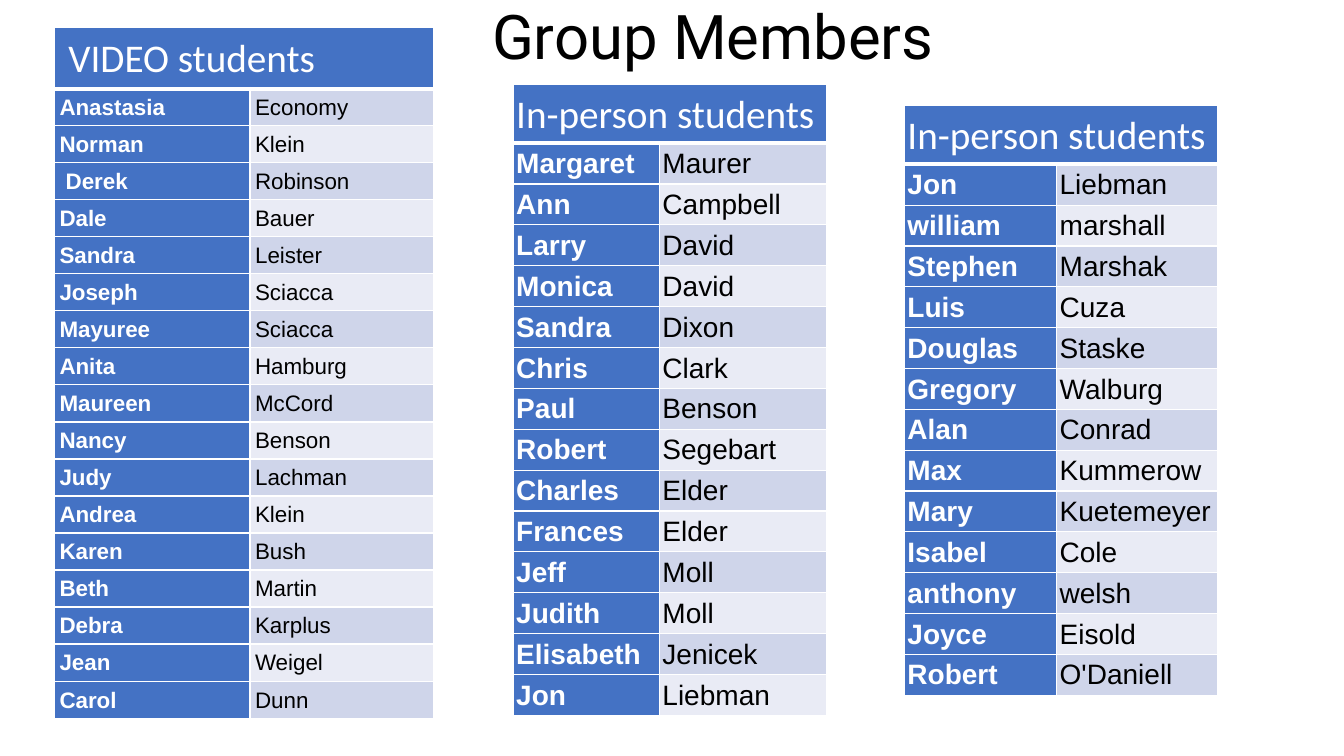
import pptx
import pptx.dml.color
import pptx.enum.text
import pptx.oxml
import pptx.oxml.ns
import pptx.util
from pptx.util import Inches

BLUE, WHITE, BLACK = "4472C4", "FFFFFF", "000000"
BANDS = ("CFD5EA", "E9EBF5")

REMOTE_STUDENTS = [
    ("Anastasia", "Economy"), ("Norman", "Klein"), (" Derek", "Robinson"),
    ("Dale", "Bauer"), ("Sandra", "Leister"), ("Joseph", "Sciacca"),
    ("Mayuree", "Sciacca"), ("Anita", "Hamburg"), ("Maureen", "McCord"),
    ("Nancy", "Benson"), ("Judy", "Lachman"), ("Andrea", "Klein"),
    ("Karen", "Bush"), ("Beth", "Martin"), ("Debra", "Karplus"),
    ("Jean", "Weigel"), ("Carol", "Dunn"),
]
FIRST_IN_PERSON_STUDENTS = [
    ("Margaret", "Maurer"), ("Ann", "Campbell"), ("Larry", "David"),
    ("Monica", "David"), ("Sandra", "Dixon"), ("Chris", "Clark"),
    ("Paul", "Benson"), ("Robert", "Segebart"), ("Charles", "Elder"),
    ("Frances", "Elder"), ("Jeff", "Moll"), ("Judith", "Moll"),
    ("Elisabeth", "Jenicek"), ("Jon", "Liebman"),
]
SECOND_IN_PERSON_STUDENTS = [
    ("Jon", "Liebman"), ("william", "marshall"), ("Stephen", "Marshak"),
    ("Luis", "Cuza"), ("Douglas", "Staske"), ("Gregory", "Walburg"),
    ("Alan", "Conrad"), ("Max", "Kummerow"), ("Mary", "Kuetemeyer"),
    ("Isabel", "Cole"), ("anthony", "welsh"), ("Joyce", "Eisold"),
    ("Robert", "O'Daniell"),
]


def color(value):
    return pptx.dml.color.RGBColor.from_string(value)


def add_run(paragraph, text, font, size, text_color, bold=False):
    run = paragraph.add_run()
    run.text = text
    run.font.name = font
    run.font.size = pptx.util.Pt(size)
    run.font.bold = bold
    run.font.color.rgb = color(text_color)


def add_borders(cell, top=1, bottom=1):
    properties = cell._tc.get_or_add_tcPr()
    for side, points in (("L", 1), ("R", 1), ("T", top), ("B", bottom)):
        properties.append(pptx.oxml.parse_xml(
            f'<a:ln{side} {pptx.oxml.ns.nsdecls("a")} w="{pptx.util.Pt(points)}">'
            f'<a:solidFill><a:srgbClr val="{WHITE}"/></a:solidFill></a:ln{side}>'))


def format_cell(cell, fill, side_margin, top_margin):
    cell.fill.solid()
    cell.fill.fore_color.rgb = color(fill)
    cell.margin_left = cell.margin_right = Inches(side_margin)
    cell.margin_top = cell.margin_bottom = Inches(top_margin)
    paragraph = cell.text_frame.paragraphs[0]
    paragraph.line_spacing = 1.07
    return paragraph


def add_title(slide, left, top, width, height):
    title = slide.shapes.title
    title.left, title.top = Inches(left), Inches(top)
    title.width, title.height = Inches(width), Inches(height)
    title.text_frame.vertical_anchor = pptx.enum.text.MSO_ANCHOR.MIDDLE
    paragraph = title.text_frame.paragraphs[0]
    paragraph.alignment = pptx.enum.text.PP_ALIGN.LEFT
    paragraph.line_spacing = 0.9
    add_run(paragraph, "Group Members", "Roboto", 44, BLACK)


def add_roster(slide, left, top, height, widths, header_height, heading,
               students, size, side_margin, top_margin):
    table = slide.shapes.add_table(
        len(students) + 1, 2, Inches(left), Inches(top),
        Inches(sum(widths)), Inches(height)).table
    for column, width in zip(table.columns, widths):
        column.width = Inches(width)
    row_height = Inches((height - header_height) / len(students))
    for row in table.rows:
        row.height = row_height
    table.rows[0].height = Inches(header_height)

    for cell in table.rows[0].cells:
        add_borders(cell, bottom=3)
    header = table.cell(0, 0)
    header.merge(table.cell(0, 1))
    paragraph = format_cell(header, BLUE, side_margin, top_margin)
    add_run(paragraph, heading, "Calibri", 28, WHITE)

    for index, names in enumerate(students):
        styles = ((BLUE, WHITE, True), (BANDS[index % 2], BLACK, False))
        for column, (name, style) in enumerate(zip(names, styles)):
            fill, text_color, bold = style
            cell = table.cell(index + 1, column)
            add_borders(cell, top=3 if index == 0 else 1)
            paragraph = format_cell(cell, fill, side_margin, top_margin)
            add_run(paragraph, name, "Arial", size, text_color, bold)


def main():
    presentation = pptx.Presentation()
    presentation.slide_width = Inches(13.33)
    presentation.slide_height = Inches(7.5)
    slide = presentation.slides.add_slide(presentation.slide_layouts[5])
    add_title(slide, 4.78, -0.33, 11.5, 1.45)
    add_roster(slide, 0.54, 0.27, 6.86, (1.94, 1.82), 0.61,
               " VIDEO students", REMOTE_STUDENTS, 16, 0.05, 0.05)
    add_roster(slide, 5.09, 0.84, 6.26, (1.45, 1.66), 0.58,
               "In-person students", FIRST_IN_PERSON_STUDENTS, 20, 0.03, 0.03)
    add_roster(slide, 8.97, 1.05, 5.85, (1.51, 1.6), 0.58,
               "In-person students", SECOND_IN_PERSON_STUDENTS, 20, 0.03, 0.03)
    presentation.save("out.pptx")


if __name__ == "__main__":
    main()
